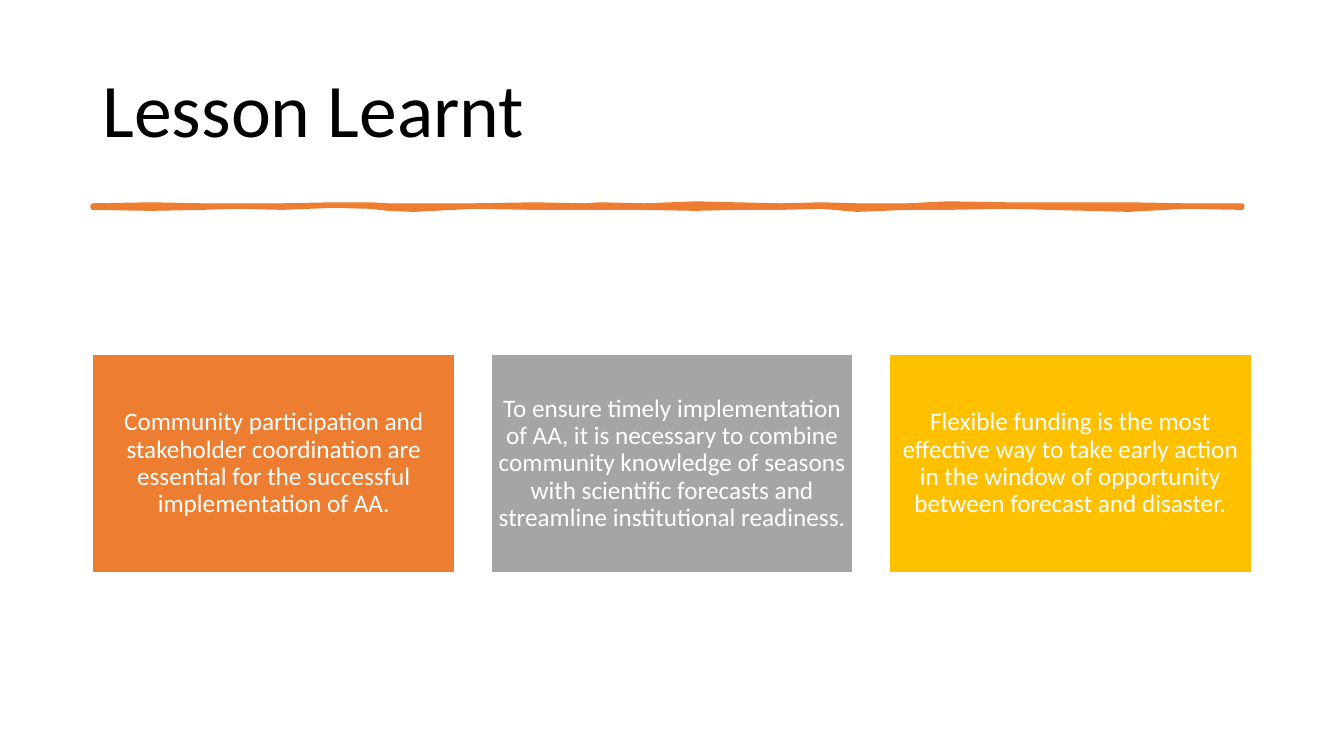
from pptx import Presentation
from pptx import util as u
from pptx.dml.color import RGBColor
from pptx.enum import shapes, text

BLACK = RGBColor(0x00, 0x00, 0x00)
WHITE = RGBColor(0xFF, 0xFF, 0xFF)
ORANGE = RGBColor(0xED, 0x7D, 0x31)
GRAY = RGBColor(0xA5, 0xA5, 0xA5)
GOLD = RGBColor(0xFF, 0xC0, 0x00)

LEFT = 0.92
CARD_TOP, CARD_WIDTH, CARD_HEIGHT, CARD_PITCH = 3.52, 3.59, 2.16, 3.95

LESSONS = [
    (ORANGE, "Community participation and stakeholder coordination are essential "
             "for the successful implementation of AA."),
    (GRAY, "To ensure timely implementation of AA, it is necessary to combine "
           "community knowledge of seasons with scientific forecasts and "
           "streamline institutional readiness."),
    (GOLD, "Flexible funding is the most effective way to take early action in "
           "the window of opportunity between forecast and disaster."),
]

# Brush stroke: x, top edge, bottom edge
BRUSH = [
    (0.92, 2.04, 2.06), (1.5, 2.03, 2.07), (2.0, 2.04, 2.06), (2.35, 2.04, 2.05),
    (2.8, 2.04, 2.06), (3.3, 2.03, 2.04), (3.68, 2.03, 2.05), (3.85, 2.04, 2.07),
    (4.1, 2.04, 2.08), (4.7, 2.04, 2.05), (5.3, 2.03, 2.06), (5.8, 2.04, 2.06),
    (5.95, 2.03, 2.06), (6.4, 2.04, 2.06), (6.9, 2.02, 2.07), (7.3, 2.03, 2.06),
    (7.75, 2.04, 2.06), (8.15, 2.03, 2.05), (8.5, 2.04, 2.08), (9.0, 2.04, 2.06),
    (9.4, 2.02, 2.06), (10.0, 2.03, 2.05), (11.2, 2.03, 2.08), (11.75, 2.04, 2.05),
    (12.32, 2.04, 2.06),
]


def write(shape, words, size, color, align, margins):
    frame = shape.text_frame
    settings = {"word_wrap": True, "vertical_anchor": text.MSO_ANCHOR.MIDDLE, **margins}
    for name, value in settings.items():
        setattr(frame, name, value)
    paragraph = frame.paragraphs[0]
    paragraph.text = words
    paragraph.alignment = align
    paragraph.line_spacing = 0.9
    font = paragraph.runs[0].font
    font.name, font.size = "Calibri", u.Pt(size)
    font.color.rgb = color


def paint(shape, fill, line, width):
    shape.shadow.inherit = False
    shape.fill.solid()
    shape.fill.fore_color.rgb = fill
    shape.line.color.rgb = line
    shape.line.width = u.Pt(width)


presentation = Presentation()
presentation.slide_width = u.Inches(13.33)
presentation.slide_height = u.Inches(7.5)
slide = presentation.slides.add_slide(presentation.slide_layouts[6])

title = slide.shapes.add_textbox(u.Inches(LEFT), u.Inches(0.4), u.Inches(11.5), u.Inches(1.45))
write(title, "Lesson Learnt", 54, BLACK, text.PP_ALIGN.LEFT, {})

top_edge = [(u.Inches(x), u.Inches(top)) for x, top, bottom in BRUSH]
bottom_edge = [(u.Inches(x), u.Inches(bottom)) for x, top, bottom in reversed(BRUSH)]
builder = slide.shapes.build_freeform(*top_edge[0])
builder.add_line_segments(top_edge[1:] + bottom_edge, close=True)
paint(builder.convert_to_shape(), ORANGE, ORANGE, 3.25)

card_margins = {f"margin_{side}": u.Inches(0.07) for side in ("left", "top", "right", "bottom")}
for index, (color, lesson) in enumerate(LESSONS):
    card = slide.shapes.add_shape(
        shapes.MSO_SHAPE.RECTANGLE, u.Inches(LEFT + index * CARD_PITCH),
        u.Inches(CARD_TOP), u.Inches(CARD_WIDTH), u.Inches(CARD_HEIGHT))
    paint(card, color, WHITE, 1)
    write(card, lesson, 18, WHITE, text.PP_ALIGN.CENTER, card_margins)

presentation.save("out.pptx")
